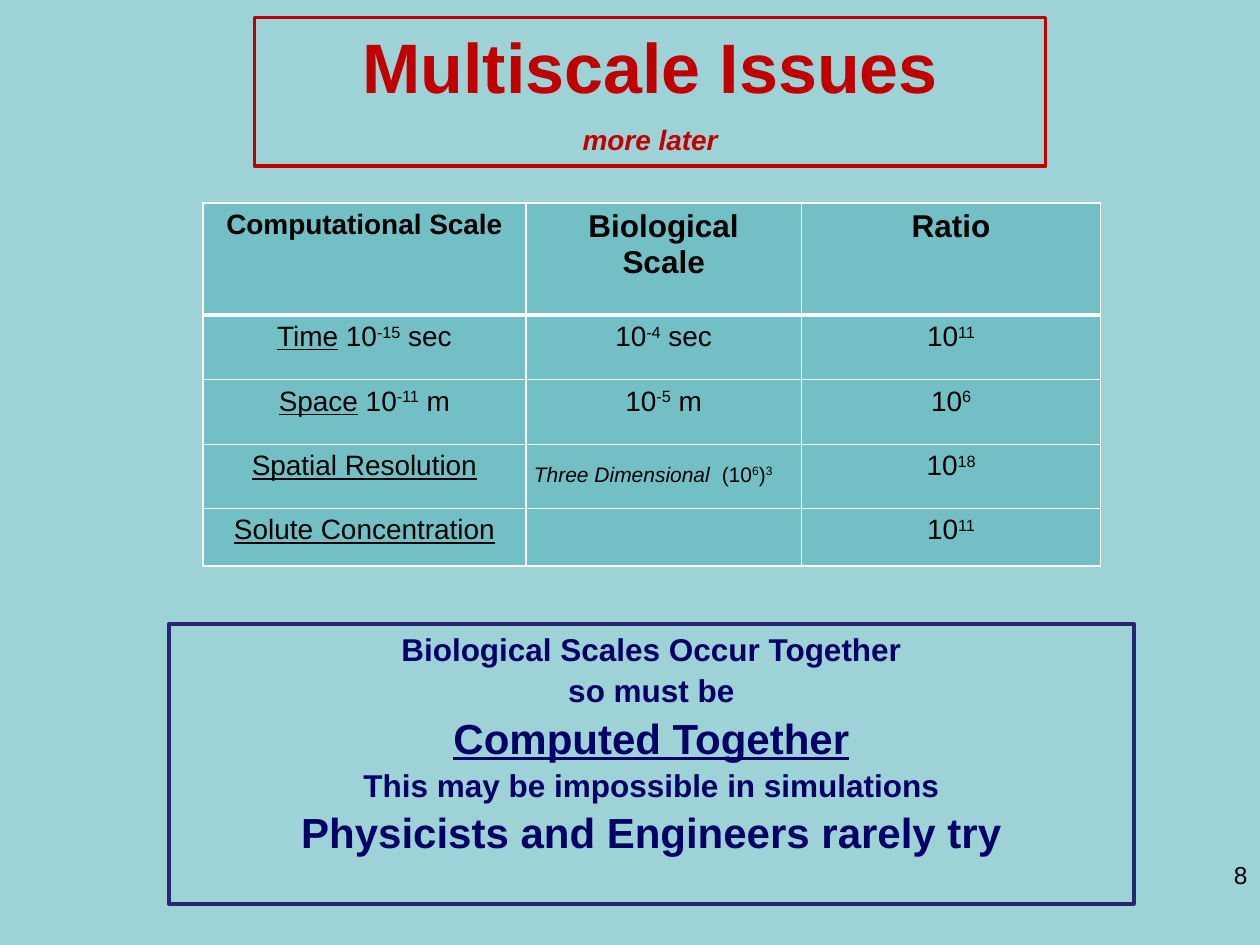
from dataclasses import dataclass, field

from lxml import etree
from pptx import Presentation
from pptx import util as u
from pptx.dml import color as dml
from pptx.enum import shapes, text
from pptx.oxml import ns

COLORS = {
    "background": "9DD3D7",
    "title": "C00000",
    "message": "000066",
    "message_border": "262673",
    "cell": "72BFC5",
    "grid": "FFFFFF",
    "body": "000000",
}
FONT = "Arial"
CENTER = text.PP_ALIGN.CENTER


@dataclass
class Span:
    words: str
    style: dict = field(default_factory=dict)


@dataclass
class Line:
    spans: list[Span]
    align: text.PP_ALIGN = CENTER
    before: float = 0


@dataclass
class Box:
    left: float
    top: float
    width: float
    height: float
    lines: list[Line]
    border: str | None = None


def rgb(name: str) -> dml.RGBColor:
    return dml.RGBColor.from_string(COLORS[name])


def add_span(para, words: str, *, size: float = 16, color: str = "body",
             bold: bool = False, italic: bool = False,
             underline: bool = False, raised: bool = False) -> None:
    span = para.add_run()
    span.text = words
    font = span.font
    font.name, font.size = FONT, u.Pt(size)
    font.bold, font.italic, font.underline = bold, italic, underline
    font.color.rgb = rgb(color)
    if raised:
        span._r.get_or_add_rPr().set("baseline", "30000")


def fill_text(frame, lines: list[Line]) -> None:
    for index, line in enumerate(lines):
        para = frame.add_paragraph() if index else frame.paragraphs[0]
        para.alignment = line.align
        para.space_before = u.Pt(line.before)
        for span in line.spans:
            add_span(para, span.words, **span.style)


def draw_box(page, box: Box) -> None:
    place = [u.Pt(v) for v in (box.left, box.top, box.width, box.height)]
    if box.border:
        shape = page.shapes.add_shape(shapes.MSO_SHAPE.RECTANGLE, *place)
        shape.shadow.inherit = False
        shape.fill.background()
        shape.line.color.rgb = rgb(box.border)
        shape.line.width = u.Pt(2)
    else:
        shape = page.shapes.add_textbox(*place)
    shape.text_frame.word_wrap = True
    shape.text_frame.vertical_anchor = text.MSO_ANCHOR.TOP
    fill_text(shape.text_frame, box.lines)


def set_border(cell, side: str, width: float) -> None:
    properties = cell._tc.get_or_add_tcPr()
    line = etree.SubElement(properties, ns.qn(f"a:ln{side}"), w=str(u.Pt(width)))
    fill = etree.SubElement(line, ns.qn("a:solidFill"))
    etree.SubElement(fill, ns.qn("a:srgbClr"), val=COLORS["grid"])


def draw_table(page, left: float, top: float, widths: list[float],
               heights: list[float], rows: list[list[list[Line]]]) -> None:
    table = page.shapes.add_table(
        len(heights), len(widths), u.Pt(left), u.Pt(top),
        u.Pt(sum(widths)), u.Pt(sum(heights))).table
    for column, width in zip(table.columns, widths):
        column.width = u.Pt(width)
    for r, (height, row) in enumerate(zip(heights, rows)):
        table.rows[r].height = u.Pt(height)
        for c, lines in enumerate(row):
            cell = table.cell(r, c)
            # The rule under the header row is heavier
            thick = {(0, "B"), (1, "T")}
            for side in "LRTB":
                set_border(cell, side, 3 if (r, side) in thick else 1)
            cell.fill.solid()
            cell.fill.fore_color.rgb = rgb("cell")
            fill_text(cell.text_frame, lines)


def header(*words: str, size: float = 18) -> list[Line]:
    return [Line([Span(word, dict(size=size, bold=True))]) for word in words]


def quantity(label: str = "", exponent: str = "", unit: str = "") -> list[Line]:
    """Underlined label, then a power of ten with its unit."""
    spans = [Span(label, dict(underline=True))] if label else []
    if exponent:
        spans.append(Span(" 10" if label else "10"))
        spans.append(Span(exponent, dict(raised=True)))
    if unit:
        spans.append(Span(f" {unit}"))
    return [Line(spans)] if spans else []


def main() -> None:
    deck = Presentation()
    deck.slide_width, deck.slide_height = u.Pt(720), u.Pt(540)
    page = deck.slides.add_slide(deck.slide_layouts[6])
    page.background.fill.solid()
    page.background.fill.fore_color.rgb = rgb("background")

    # Page number
    draw_box(page, Box(632, 488, 88, 37.5, [
        Line([Span("8", dict(size=14))], text.PP_ALIGN.RIGHT)]))

    # Title
    title = dict(color="title", bold=True)
    draw_box(page, Box(145.5, 10, 452, 85, [
        Line([Span("Multiscale Issues", dict(title, size=40))], before=4),
        Line([Span("more later", dict(title, italic=True))], before=8.5),
    ], "title"))

    # Closing message
    message = [
        ("Biological Scales Occur Together", dict(size=18)),
        ("so must be", dict(size=18)),
        ("Computed Together", dict(size=24, underline=True)),
        ("This may be impossible in simulations", dict(size=18)),
        ("Physicists and Engineers rarely try", dict(size=24)),
    ]
    draw_box(page, Box(96.5, 356.5, 551.5, 160, [
        Line([Span(words, dict(style, color="message", bold=True))], before=1.8)
        for words, style in message
    ], "message_border"))

    # Table of scales
    draw_table(page, 116, 116, [184.5, 157.5, 171], [64, 37, 37, 36.5, 33], [
        [header("Computational Scale", size=16), header("Biological", "Scale"),
         header("Ratio")],
        [quantity("Time", "-15", "sec"), quantity("", "-4", "sec"),
         quantity("", "11")],
        [quantity("Space", "-11", "m"), quantity("", "-5", "m"),
         quantity("", "6")],
        [quantity("Spatial Resolution"), quantity(), quantity("", "18")],
        [quantity("Solute Concentration"), quantity(), quantity("", "11")],
    ])

    # Note over the spatial resolution row
    small, power = dict(size=12), dict(size=12, raised=True)
    draw_box(page, Box(298, 260, 165, 21.5, [Line([
        Span("Three Dimensional ", dict(small, italic=True)),
        Span(" (10", small), Span("6", power),
        Span(")", small), Span("3", power),
    ], text.PP_ALIGN.LEFT)]))

    deck.save("out.pptx")


if __name__ == "__main__":
    main()
